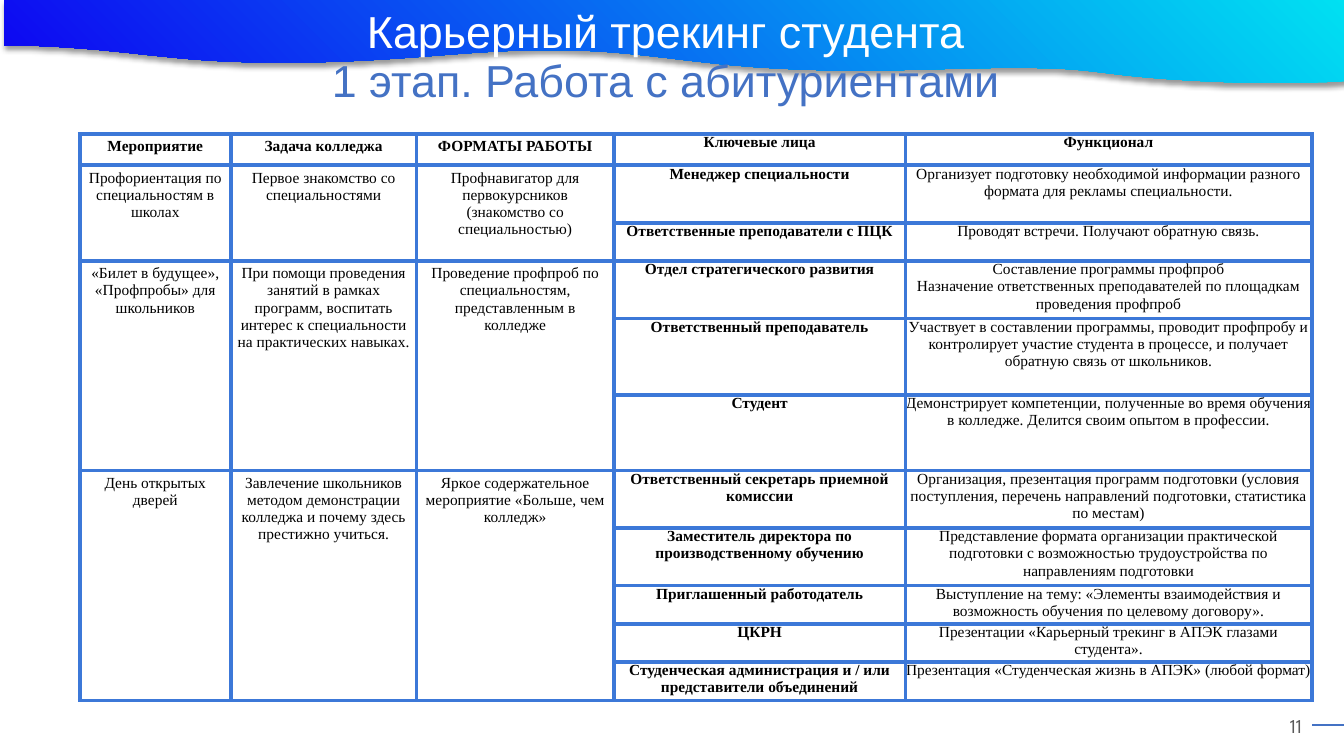
from lxml import etree
from pptx import Presentation
from pptx.dml.color import RGBColor
from pptx.enum.shapes import MSO_CONNECTOR
from pptx.enum.text import MSO_ANCHOR, MSO_AUTO_SIZE, PP_ALIGN
from pptx.oxml import parse_xml
from pptx.oxml.ns import nsdecls, qn
from pptx.util import Inches, Pt

CENTER = PP_ALIGN.CENTER
RIGHT = PP_ALIGN.RIGHT
MIDDLE = MSO_ANCHOR.MIDDLE
TOP = MSO_ANCHOR.TOP
NO_FIT = MSO_AUTO_SIZE.NONE
STRAIGHT = MSO_CONNECTOR.STRAIGHT

WHITE = RGBColor(0xFF, 0xFF, 0xFF)
BLACK = RGBColor(0x00, 0x00, 0x00)
BLUE = RGBColor(0x44, 0x72, 0xC4)
GRAY = RGBColor(0x59, 0x59, 0x59)
CYAN = RGBColor(0x00, 0xE1, 0xF2)
DEEP_BLUE = RGBColor(0x0E, 0x03, 0xF2)
BORDER = RGBColor(0x3C, 0x78, 0xD8)

TITLE_LINES = [
    ("Карьерный трекинг студента", WHITE),
    ("1 этап. Работа с абитуриентами", BLUE),
]

WAVE_START = (13.27, 0.81)
WAVE_CURVES = [
    ((12.97, 0.82), (12.6, 0.83), (12.03, 0.81)),
    ((10.5, 0.74), (11.16, 0.63), (9.17, 0.69)),
    ((7.17, 0.75), (6.74, 0.53), (5.71, 0.5)),
    ((4.67, 0.47), (4.04, 0.63), (2.72, 0.62)),
    ((1.65, 0.62), (1.3, 0.48), (0.2, 0.45)),
]
CURVE_STEPS = 16

COLUMN_WIDTHS = [1.5, 1.84, 1.96, 2.89, 4.03]
ROW_HEIGHTS = [0.31, 0.57, 0.38, 0.57, 0.76, 0.75, 0.57, 0.57, 0.38, 0.38, 0.38]
HEADERS = ["Мероприятие", "Задача колледжа", "ФОРМАТЫ РАБОТЫ", "Ключевые лица", "Функционал"]
EVENTS = [
    (
        [
            "Профориентация по специальностям в школах",
            "Первое знакомство со специальностями",
            "Профнавигатор для первокурсников (знакомство со специальностью)",
        ],
        [
            ("Менеджер специальности",
             "Организует подготовку необходимой информации разного формата для рекламы специальности."),
            ("Ответственные преподаватели с ПЦК",
             "Проводят встречи. Получают обратную связь."),
        ],
    ),
    (
        [
            "«Билет в будущее», «Профпробы» для школьников",
            "При помощи проведения занятий в рамках программ, воспитать интерес "
            "к специальности на практических навыках.",
            "Проведение профпроб по специальностям, представленным в колледже",
        ],
        [
            ("Отдел стратегического развития",
             "Составление программы профпроб\n"
             "Назначение ответственных преподавателей по площадкам проведения профпроб"),
            ("Ответственный преподаватель",
             "Участвует в составлении программы, проводит профпробу и контролирует участие "
             "студента в процессе, и получает обратную связь от школьников."),
            ("Студент",
             "Демонстрирует компетенции, полученные во время обучения в колледже. "
             "Делится своим опытом в профессии."),
        ],
    ),
    (
        [
            "День открытых дверей",
            "Завлечение школьников методом демонстрации колледжа и почему здесь престижно учиться.",
            "Яркое содержательное мероприятие «Больше, чем колледж»",
        ],
        [
            ("Ответственный секретарь приемной комиссии",
             "Организация, презентация программ подготовки (условия поступления, "
             "перечень направлений подготовки, статистика по местам)"),
            ("Заместитель директора по производственному обучению",
             "Представление формата организации практической подготовки с возможностью "
             "трудоустройства по направлениям подготовки"),
            ("Приглашенный работодатель",
             "Выступление на тему: «Элементы взаимодействия и возможность обучения "
             "по целевому договору»."),
            ("ЦКРН", "Презентации «Карьерный трекинг в АПЭК глазами студента»."),
            ("Студенческая администрация и / или представители объединений",
             "Презентация «Студенческая жизнь в АПЭК» (любой формат)"),
        ],
    ),
]


def format_paragraph(para, size, font, color, align, bold=False):
    para.alignment = align
    para.font.size = Pt(size)
    para.font.name = font
    para.font.color.rgb = color
    para.font.bold = bold


def curve_points(start, first, second, end):
    points = []
    for step in range(1, CURVE_STEPS + 1):
        t = step / CURVE_STEPS
        weights = ((1 - t) ** 3, 3 * t * (1 - t) ** 2, 3 * t * t * (1 - t), t ** 3)
        controls = (start, first, second, end)
        points.append(tuple(sum(w * c[axis] for w, c in zip(weights, controls)) for axis in (0, 1)))
    return points


def add_wave(slide, left, right):
    points = [(right, 0), (right, 0.8), WAVE_START]
    for curve in WAVE_CURVES:
        points += curve_points(points[-1], *curve)
    points.append((left, 0.45))
    builder = slide.shapes.build_freeform(Inches(left), 0)
    builder.add_line_segments([(Inches(x), Inches(y)) for x, y in points])
    wave = builder.convert_to_shape()
    wave.line.fill.background()
    wave.fill.gradient()
    wave.fill.gradient_angle = 225
    for stop, color in zip(wave.fill.gradient_stops, (CYAN, DEEP_BLUE)):
        stop.color.rgb = color
    wave._element.spPr.append(parse_xml(
        f'<a:effectLst {nsdecls("a")}><a:outerShdw blurRad="{Pt(4)}" dist="{Pt(3)}" dir="5400000">'
        '<a:srgbClr val="000000"><a:alpha val="40000"/></a:srgbClr></a:outerShdw></a:effectLst>'))


def add_title(slide, left, top, width, height):
    title = slide.shapes.title
    title.left, title.top, title.width, title.height = map(Inches, (left, top, width, height))
    frame = title.text_frame
    frame.auto_size = NO_FIT
    frame.vertical_anchor = MIDDLE
    frame.text = "\n".join(text for text, color in TITLE_LINES)
    for para, (text, color) in zip(frame.paragraphs, TITLE_LINES):
        format_paragraph(para, 32, "Arial", color, CENTER)
        para.line_spacing = 0.9
    slide.shapes._spTree.append(title._element)


def set_borders(cell):
    properties = cell._tc.get_or_add_tcPr()
    for index, side in enumerate(("lnL", "lnR", "lnT", "lnB")):
        line = etree.Element(qn(f"a:{side}"), w=str(Pt(3)))
        fill = etree.SubElement(line, qn("a:solidFill"))
        etree.SubElement(fill, qn("a:srgbClr"), val=str(BORDER))
        properties.insert(index, line)


def fill_cell(cell, text, bold, padded):
    cell.text = text
    cell.vertical_anchor = TOP
    cell.margin_left = cell.margin_right = Inches(0.06 if padded else 0)
    cell.margin_top = cell.margin_bottom = Inches(0.04 if padded else 0)
    for para in cell.text_frame.paragraphs:
        format_paragraph(para, 11, "Times New Roman", BLACK, CENTER, bold)


def add_events_table(slide, left, top):
    table = slide.shapes.add_table(
        len(ROW_HEIGHTS), len(COLUMN_WIDTHS), Inches(left), Inches(top),
        Inches(sum(COLUMN_WIDTHS)), Inches(sum(ROW_HEIGHTS))).table
    table.first_row = table.horz_banding = False
    for column, width in zip(table.columns, COLUMN_WIDTHS):
        column.width = Inches(width)
    for row, height in zip(table.rows, ROW_HEIGHTS):
        row.height = Inches(height)
    for cell in table.iter_cells():
        fill_cell(cell, "", False, False)
        cell.fill.background()
        set_borders(cell)
    for column, header in enumerate(HEADERS):
        fill_cell(table.cell(0, column), header, True, column < 3)
    row = 1
    for summary, roles in EVENTS:
        for column, text in enumerate(summary):
            cell = table.cell(row, column)
            cell.merge(table.cell(row + len(roles) - 1, column))
            fill_cell(cell, text, False, True)
        for role, duty in roles:
            fill_cell(table.cell(row, 3), role, True, False)
            fill_cell(table.cell(row, 4), duty, False, False)
            row += 1


def add_page_number(slide, left, top, width, height):
    edge = left + width
    line = slide.shapes.add_connector(
        STRAIGHT, Inches(13.33), Inches(top + 0.16), Inches(edge), Inches(top + 0.16))
    line.line.color.rgb = BLUE
    line.line.width = Pt(1.5)
    etree.SubElement(line._element.spPr, qn("a:effectLst"))
    box = slide.shapes.add_textbox(*map(Inches, (left, top, width, height)))
    box.text_frame.word_wrap = True
    box.text_frame.text = "11"
    format_paragraph(box.text_frame.paragraphs[0], 14, "League Spartan", GRAY, RIGHT)


def main():
    deck = Presentation()
    deck.slide_width, deck.slide_height = Inches(13.33), Inches(7.5)
    slide = deck.slides.add_slide(deck.slide_layouts[5])
    add_page_number(slide, 12.17, 7.03, 0.84, 0.35)
    add_wave(slide, 0.04, 13.37)
    add_title(slide, 0.79, 0, 11.63, 1.16)
    add_events_table(slide, 0.79, 1.33)
    deck.save("out.pptx")


if __name__ == "__main__":
    main()
